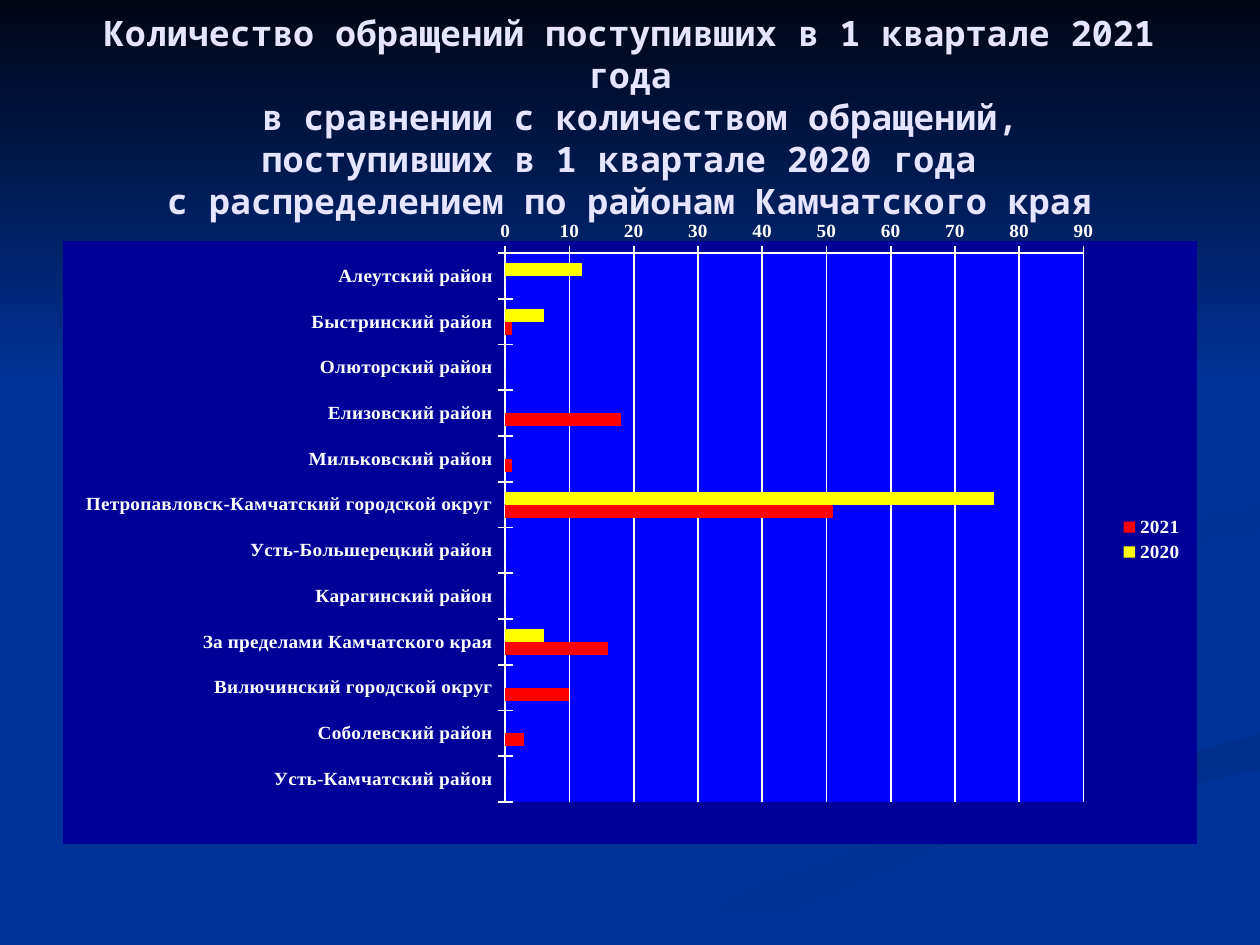
from dataclasses import dataclass

from lxml.etree import SubElement
from pptx import Presentation
from pptx.chart.data import CategoryChartData
from pptx.dml.color import RGBColor
from pptx.enum.chart import XL_AXIS_CROSSES as Crosses
from pptx.enum.chart import XL_CHART_TYPE as ChartType
from pptx.enum.chart import XL_LEGEND_POSITION as LegendPosition
from pptx.enum.chart import XL_TICK_MARK as TickMark
from pptx.enum.shapes import MSO_SHAPE as Preset
from pptx.enum.text import MSO_ANCHOR as Anchor
from pptx.enum.text import PP_ALIGN as Align
from pptx.oxml import parse_xml
from pptx.oxml.ns import nsdecls, qn
from pptx.util import Cm, Pt


@dataclass(frozen=True)
class Theme:
    """Colours, fonts and type sizes of the slide."""
    page: str = "003399"
    night: str = "000514"
    shade: str = "002F8C"
    title: str = "E5E5FF"
    white: str = "FFFFFF"
    panel: str = "000099"
    plot: str = "0000FF"
    earlier: str = "FFFF00"
    later: str = "FF0000"
    title_font: str = "Noto Sans Mono"
    chart_font: str = "Times New Roman"
    title_size: int = 20
    chart_size: int = 11


THEME = Theme()

TITLE = (
    "Количество обращений поступивших в 1 квартале 2021 года\n"
    " в сравнении с количеством обращений,\n"
    "поступивших в 1 квартале 2020 года \n"
    "с распределением по районам Камчатского края"
)

DISTRICTS = {
    "Алеутский район": (12, 0),
    "Быстринский район": (6, 1),
    "Олюторский район": (0, 0),
    "Елизовский район": (0, 18),
    "Мильковский район": (0, 1),
    "Петропавловск-Камчатский городской округ": (76, 51),
    "Усть-Большерецкий район": (0, 0),
    "Карагинский район": (0, 0),
    "За пределами Камчатского края": (6, 16),
    "Вилючинский городской округ": (0, 10),
    "Соболевский район": (0, 3),
    "Усть-Камчатский район": (0, 0),
}

LOWER_RIBBON = [(128, 190), (145, 190), (191, 170), (254, 155), (254, 148),
                (194, 164), (152, 179)]
UPPER_RIBBON = [(198, 117), (210, 126), (205, 119), (218, 113), (254, 107),
                (254, 102), (210, 111)]


def color(code):
    """Turn a hex code into a colour."""
    return RGBColor.from_string(code)


def style_font(font, *, face, size, shade):
    """Give a font its face, size, colour and bold weight."""
    font.name, font.size, font.bold = face, Pt(size), True
    font.color.rgb = color(shade)


def fade(shape, start, angle):
    """Fade a shape without outline from a colour into the page colour."""
    shape.shadow.inherit = False
    shape.line.fill.background()
    shape.fill.gradient()
    shape.fill.gradient_angle = 360 - angle
    for stop, code in zip(shape.fill.gradient_stops, (start, THEME.page)):
        stop.color.rgb = color(code)


def add_ribbon(page, points, angle):
    """Draw a background ribbon from points in millimetres."""
    builder = page.shapes.build_freeform(*points[0], scale=Cm(0.1))
    builder.add_line_segments(points[1:], close=True)
    fade(builder.convert_to_shape(), THEME.shade, angle)


def add_backdrop(page, width):
    """Add the page colour, the ribbons and the dark band at the top."""
    page.background.fill.solid()
    page.background.fill.fore_color.rgb = color(THEME.page)
    add_ribbon(page, LOWER_RIBBON, 90)
    add_ribbon(page, UPPER_RIBBON, 45)
    band = page.shapes.add_shape(Preset.RECTANGLE, 0, 0, width, Cm(7.82))
    fade(band, THEME.night, 90)


def add_text(page, text, *, left, top, width, height, face, size, shade):
    """Add a centred text box in one format."""
    box = page.shapes.add_textbox(Cm(left), Cm(top), Cm(width), Cm(height))
    frame = box.text_frame
    frame.word_wrap = True
    frame.vertical_anchor = Anchor.MIDDLE
    para = frame.paragraphs[0]
    para.text = text.replace("\n", "\v")
    para.alignment = Align.CENTER
    for span in para.runs:
        style_font(span.font, face=face, size=size, shade=shade)


def area_fill(code):
    """Build the chart XML for a plain fill without an outline."""
    return parse_xml(
        f'<c:spPr {nsdecls("c", "a")}><a:solidFill><a:srgbClr val="{code}"/>'
        "</a:solidFill><a:ln><a:noFill/></a:ln></c:spPr>")


def place(element, index, target, **bounds):
    """Fix a chart part at fractions of the chart area."""
    for old in element.findall(qn("c:layout")):
        element.remove(old)
    layout = parse_xml(f'<c:layout {nsdecls("c")}><c:manualLayout/></c:layout>')
    if target:
        SubElement(layout[0], qn("c:layoutTarget"), val=target)
    for side in ("x", "y"):
        SubElement(layout[0], qn(f"c:{side}Mode"), val="edge")
    for side, value in bounds.items():
        SubElement(layout[0], qn(f"c:{side}"), val=str(value))
    element.insert(index, layout)


def style_axes(rows, values):
    """Set the order, scale, ticks and lines of both axes."""
    rows.reverse_order = True
    rows.crosses = Crosses.MAXIMUM
    values.minimum_scale, values.maximum_scale, values.major_unit = 0, 90, 10
    values.has_major_gridlines = True
    for axis in (rows, values):
        axis.major_tick_mark = TickMark.CROSS
    for part in (rows, values, values.major_gridlines):
        part.format.line.color.rgb = color(THEME.white)
        part.format.line.width = Pt(1)


def add_bars(page):
    """Add the bar chart of appeals by district."""
    data = CategoryChartData()
    data.categories = list(DISTRICTS)
    for year, counts in zip(("2020", "2021"), zip(*DISTRICTS.values())):
        data.add_series(year, counts)
    chart = page.shapes.add_chart(ChartType.BAR_CLUSTERED, Cm(1.27), Cm(4.45),
                                  Cm(22.86), Cm(12.57), data).chart
    chart.has_title = False
    chart.has_legend = True
    chart.legend.position = LegendPosition.RIGHT
    chart.legend.include_in_layout = False
    rows, values = chart.category_axis, chart.value_axis
    for part in (chart, chart.legend, rows.tick_labels, values.tick_labels):
        style_font(part.font, face=THEME.chart_font, size=THEME.chart_size,
                   shade=THEME.white)
    style_axes(rows, values)
    plot = chart.plots[0]
    plot.gap_width, plot.overlap, plot.vary_by_categories = 150, 0, False
    for series, code in zip(plot.series, (THEME.earlier, THEME.later)):
        series.format.fill.solid()
        series.format.fill.fore_color.rgb = color(code)
    body = chart._chartSpace.find(qn("c:chart"))
    body.addnext(area_fill(THEME.panel))
    area = body.find(qn("c:plotArea"))
    area.append(area_fill(THEME.plot))
    place(area, 0, "inner", x=0.39, y=0.02, w=0.51, h=0.91)
    place(chart.legend._element, 1, None, x=0.93, y=0.45, w=0.06, h=0.09)


def main():
    """Build and save the slide."""
    deck = Presentation()
    deck.slide_width, deck.slide_height = Cm(25.4), Cm(19.05)
    page = deck.slides.add_slide(deck.slide_layouts[6])
    add_backdrop(page, deck.slide_width)
    add_text(page, TITLE, left=1.27, top=0.76, width=22.86, height=3.18,
             face=THEME.title_font, size=THEME.title_size, shade=THEME.title)
    add_bars(page)
    deck.save("out.pptx")


if __name__ == "__main__":
    main()
